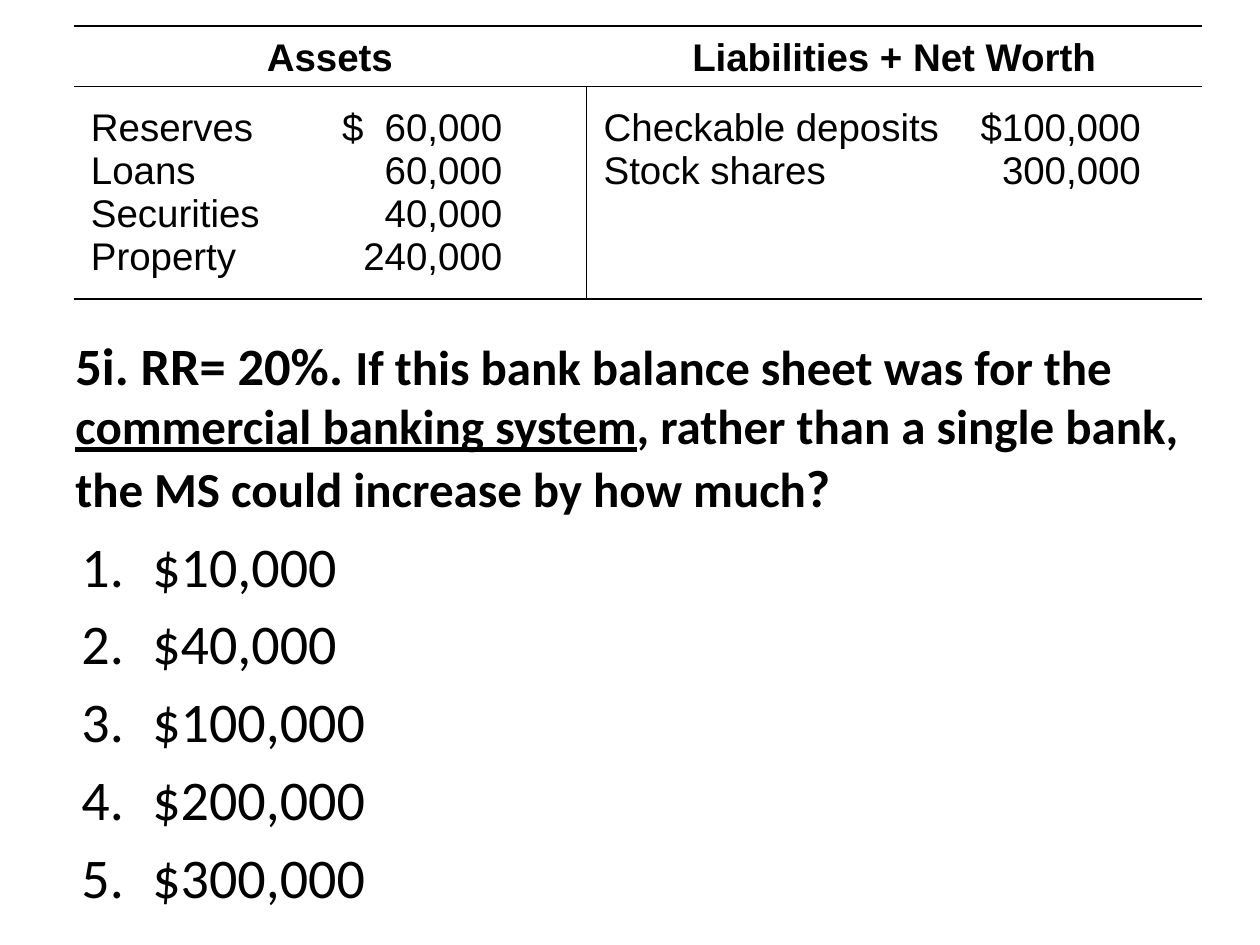
from dataclasses import dataclass

from lxml.etree import SubElement
from pptx import Presentation
from pptx.dml.color import RGBColor
from pptx.enum.text import MSO_ANCHOR as Anchor, PP_ALIGN as Align
from pptx.oxml.ns import qn
from pptx.util import Pt


@dataclass(frozen=True)
class Theme:
    ink: str = "000000"
    table_font: str = "Arial"
    text_font: str = "Calibri"
    table_size: int = 22
    question_size: int = 28
    emphasis_size: int = 30
    answer_size: int = 32
    rule_width: int = 1


THEME = Theme()
HEADERS = ["Assets", "Liabilities + Net Worth"]
COLUMN_WIDTHS = [293, 352]
ROW_HEIGHTS = [34.5, 121.5]
DOLLAR_TABS = [143.5, None]
AMOUNT_TABS = [235, 307]
ENTRIES = [
    ["Reserves\t$\t60,000", "Loans\t60,000", "Securities\t40,000", "Property\t240,000"],
    ["Checkable deposits\t$100,000", "Stock shares\t300,000"],
]
QUESTION = [
    ("5i. RR= 20%. ", {"size": THEME.emphasis_size}),
    ("If this bank balance sheet was for the ", {}),
    ("commercial banking system", {"underline": True}),
    (", rather than a single bank, the MS could increase by how much", {}),
    ("?", {"size": THEME.emphasis_size}),
]
ANSWERS = ["$10,000", "$40,000", "$100,000", "$200,000", "$300,000"]


def write(paragraph, text, *, size, font=THEME.text_font, bold=False, underline=False):
    run = paragraph.add_run()
    run.text = text
    run.font.name = font
    run.font.size = Pt(size)
    run.font.bold = bold
    run.font.underline = underline
    run.font.color.rgb = RGBColor.from_string(THEME.ink)


def paragraphs_for(frame, items):
    for index, item in enumerate(items):
        yield (frame.add_paragraph() if index else frame.paragraphs[0]), item


def add_text_frame(slide, left, top, width, height, anchor=Anchor.TOP):
    frame = slide.shapes.add_textbox(Pt(left), Pt(top), Pt(width), Pt(height)).text_frame
    frame.word_wrap = True
    frame.vertical_anchor = anchor
    return frame


def set_tabs(paragraph, stops):
    tab_list = SubElement(paragraph._p.get_or_add_pPr(), qn("a:tabLst"))
    for position, alignment in stops:
        SubElement(tab_list, qn("a:tab"), pos=str(Pt(position)), algn=alignment)


def set_borders(cell, visible):
    properties = cell._tc.get_or_add_tcPr()
    for side in "LRTB":
        line = SubElement(properties, qn(f"a:ln{side}"), w=str(Pt(THEME.rule_width)))
        if side in visible:
            fill = SubElement(line, qn("a:solidFill"))
            SubElement(fill, qn("a:srgbClr"), val=THEME.ink)
        else:
            SubElement(line, qn("a:noFill"))


def format_cell(cell, left, top, bottom, borders):
    cell.margin_left, cell.margin_right = Pt(left), Pt(0)
    cell.margin_top, cell.margin_bottom = Pt(top), Pt(bottom)
    set_borders(cell, borders)
    cell.fill.background()


def add_balance_sheet(slide):
    table = slide.shapes.add_table(
        2, 2, Pt(42), Pt(15), Pt(sum(COLUMN_WIDTHS)), Pt(sum(ROW_HEIGHTS))
    ).table
    table.first_row = table.horz_banding = False
    for row, height in zip(table.rows, ROW_HEIGHTS):
        row.height = Pt(height)
    for index, width in enumerate(COLUMN_WIDTHS):
        table.columns[index].width = Pt(width)
        header, body = table.cell(0, index), table.cell(1, index)
        format_cell(header, 0, 6, 2, "TB")
        format_cell(body, 10, 11.5, 4.5, "TB" + "RL"[index])
        title = header.text_frame.paragraphs[0]
        title.alignment = Align.CENTER
        write(title, HEADERS[index], size=THEME.table_size, font=THEME.table_font, bold=True)
        for paragraph, entry in paragraphs_for(body.text_frame, ENTRIES[index]):
            stops = [(AMOUNT_TABS[index], "r")]
            if entry.count("\t") == 2:
                stops.insert(0, (DOLLAR_TABS[index], "l"))
            set_tabs(paragraph, stops)
            write(paragraph, entry, size=THEME.table_size, font=THEME.table_font)


def add_question(slide):
    paragraph = add_text_frame(slide, 36, 180, 648, 126, Anchor.MIDDLE).paragraphs[0]
    for text, emphasis in QUESTION:
        write(paragraph, text, **{"size": THEME.question_size, "bold": True, **emphasis})


def add_answers(slide):
    frame = add_text_frame(slide, 39.5, 300, 252, 222)
    for paragraph, answer in paragraphs_for(frame, ANSWERS):
        paragraph.space_before = Pt(6)
        properties = paragraph._p.get_or_add_pPr()
        properties.set("marL", str(Pt(40.5)))
        properties.set("indent", str(Pt(-40.5)))
        SubElement(properties, qn("a:buFont"), typeface=THEME.text_font)
        SubElement(properties, qn("a:buAutoNum"), type="arabicPeriod")
        write(paragraph, answer, size=THEME.answer_size)


def main():
    presentation = Presentation()
    presentation.slide_width, presentation.slide_height = Pt(720), Pt(540)
    slide = presentation.slides.add_slide(presentation.slide_layouts[6])
    add_balance_sheet(slide)
    add_question(slide)
    add_answers(slide)
    presentation.save("out.pptx")


if __name__ == "__main__":
    main()
